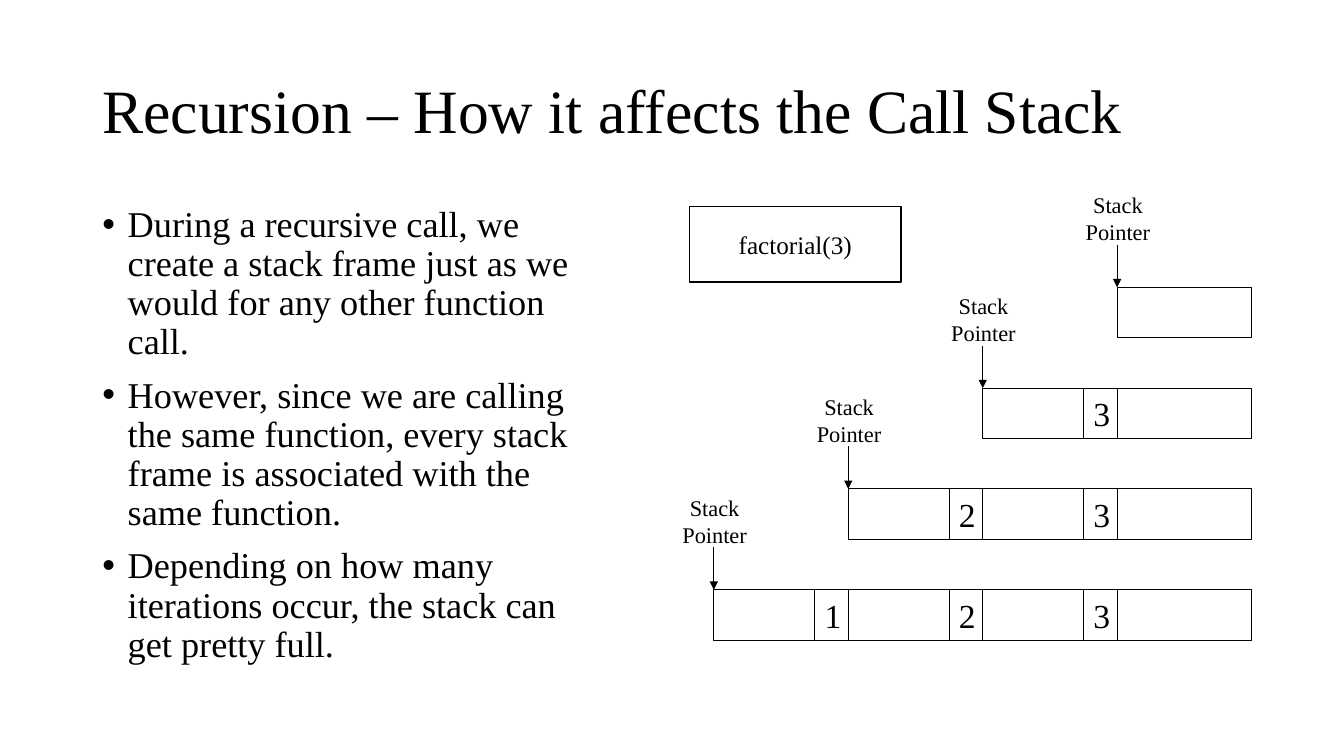
"""Build a slide that shows how recursion fills the call stack."""
from dataclasses import dataclass

from lxml import etree
from pptx import Presentation
from pptx.dml.color import RGBColor
from pptx.enum.shapes import MSO_CONNECTOR, MSO_SHAPE
from pptx.enum.text import MSO_ANCHOR, MSO_AUTO_SIZE, PP_ALIGN
from pptx.oxml.ns import qn
from pptx.util import Cm, Pt

RECT = MSO_SHAPE.RECTANGLE
LINE = MSO_CONNECTOR.STRAIGHT
LEFT, CENTER = PP_ALIGN.LEFT, PP_ALIGN.CENTER
TOP, MIDDLE = MSO_ANCHOR.TOP, MSO_ANCHOR.MIDDLE
NO_FIT = MSO_AUTO_SIZE.NONE


@dataclass(frozen=True)
class Theme:
    """Font, colours and type sizes of the slide."""
    font: str = "Times New Roman"
    ink: RGBColor = RGBColor(0, 0, 0)
    paper: RGBColor = RGBColor(255, 255, 255)
    title: float = 44
    body: float = 25.9
    value: float = 24
    call: float = 18
    label: float = 16
    thin: float = 0.75
    thick: float = 1


THEME = Theme()
TITLE = "Recursion – How it affects the Call Stack"
POINTS = [
    "During a recursive call, we create a stack frame just as we would "
    "for any other function call.",
    "However, since we are calling the same function, every stack frame "
    "is associated with the same function.",
    "Depending on how many iterations occur, the stack can get pretty full.",
]
DEPTH = 3


def write(shape, text, size, align=LEFT, anchor=TOP, wrap=True):
    """Put styled text into a shape."""
    frame = shape.text_frame
    frame.text = text
    frame.word_wrap = wrap
    frame.auto_size = NO_FIT
    frame.vertical_anchor = anchor
    for para in frame.paragraphs:
        para.alignment = align
        for run in para.runs:
            run.font.name = THEME.font
            run.font.size = Pt(size)
            run.font.color.rgb = THEME.ink
    return frame


def add_text(slide, box, text, size, align=LEFT, wrap=True):
    """Add a text box at a box given in centimetres."""
    shape = slide.shapes.add_textbox(*map(Cm, box))
    return write(shape, text, size, align, wrap=wrap)


def add_rect(slide, box, width):
    """Add an outlined, unfilled rectangle."""
    rect = slide.shapes.add_shape(RECT, *map(Cm, box))
    rect.shadow.inherit = False
    rect.fill.background()
    rect.line.color.rgb = THEME.ink
    rect.line.width = Pt(width)
    return rect


def add_drop(slide, x, top, end, arrow=False):
    """Draw a vertical line, with an arrowhead if asked."""
    link = slide.shapes.add_connector(LINE, Cm(x), Cm(top), Cm(x), Cm(end))
    link.line.color.rgb = THEME.ink
    link.line.width = Pt(THEME.thin)
    if arrow:
        edge = link.line._get_or_add_ln()
        etree.SubElement(edge, qn("a:tailEnd"), type="triangle")
    etree.SubElement(link._element.spPr, qn("a:effectLst"))


def set_title(slide, box):
    """Place and format the title placeholder."""
    title = slide.shapes.title
    title.left, title.top, title.width, title.height = map(Cm, box)
    frame = write(title, TITLE, THEME.title, anchor=MIDDLE)
    frame.paragraphs[0].line_spacing = 0.9


def add_points(slide, box):
    """Add the bulleted text."""
    frame = add_text(slide, box, "\n".join(POINTS), THEME.body)
    for para in frame.paragraphs:
        para.line_spacing = 0.9
        para.space_before = Pt(10)
        props = para._p.get_or_add_pPr()
        props.set("marL", str(Cm(0.64)))
        props.set("indent", str(-Cm(0.64)))
        etree.SubElement(props, qn("a:buFont"), typeface="Arial")
        etree.SubElement(props, qn("a:buChar"), char="•")


def add_call(slide, box):
    """Add the box with the first call."""
    rect = add_rect(slide, box, THEME.thick)
    rect.fill.solid()
    rect.fill.fore_color.rgb = THEME.paper
    write(rect, f"factorial({DEPTH})", THEME.call, CENTER, MIDDLE)


def add_frame(slide, box, value):
    """Add one stack frame, with its argument if it has one."""
    x, y, wide, high = box
    add_rect(slide, box, THEME.thin)
    if value:
        cell = x + 0.75 * wide
        add_text(slide, (cell, y, 0.94, high), value, THEME.value, wrap=False)
        add_drop(slide, cell, y, y + high)


def add_pointer(slide, x, y):
    """Point the stack pointer at a frame's top left corner."""
    box = (x - 1.06, y - 2.54, 2.16, 1.63)
    add_text(slide, box, "Stack\nPointer", THEME.label, CENTER, False)
    add_drop(slide, x, y - 1.07, y, arrow=True)


def add_stacks(slide, box):
    """Draw the stack after each call, growing to the left."""
    left, top, width, height = box
    count = DEPTH + 1
    wide = width / count
    high = height / (2 * count - 1)
    for row in range(count):
        y = top + 2 * high * row
        for col in range(row + 1):
            x = left + wide * (DEPTH - col)
            value = str(count - col) if col else ""
            add_frame(slide, (x, y, wide, high), value)
        add_pointer(slide, left + wide * (DEPTH - row), y)


def main():
    """Build and save the slide."""
    deck = Presentation()
    deck.slide_width, deck.slide_height = Cm(33.87), Cm(19.05)
    slide = deck.slides.add_slide(deck.slide_layouts.get_by_name("Title Only"))
    set_title(slide, (2.33, 1.01, 29.21, 3.68))
    add_points(slide, (2.33, 5.07, 12.67, 12.09))
    add_stacks(slide, (17.99, 7.24, 13.55, 8.89))
    add_call(slide, (17.38, 5.21, 5.33, 1.9))
    deck.save("out.pptx")


if __name__ == "__main__":
    main()
